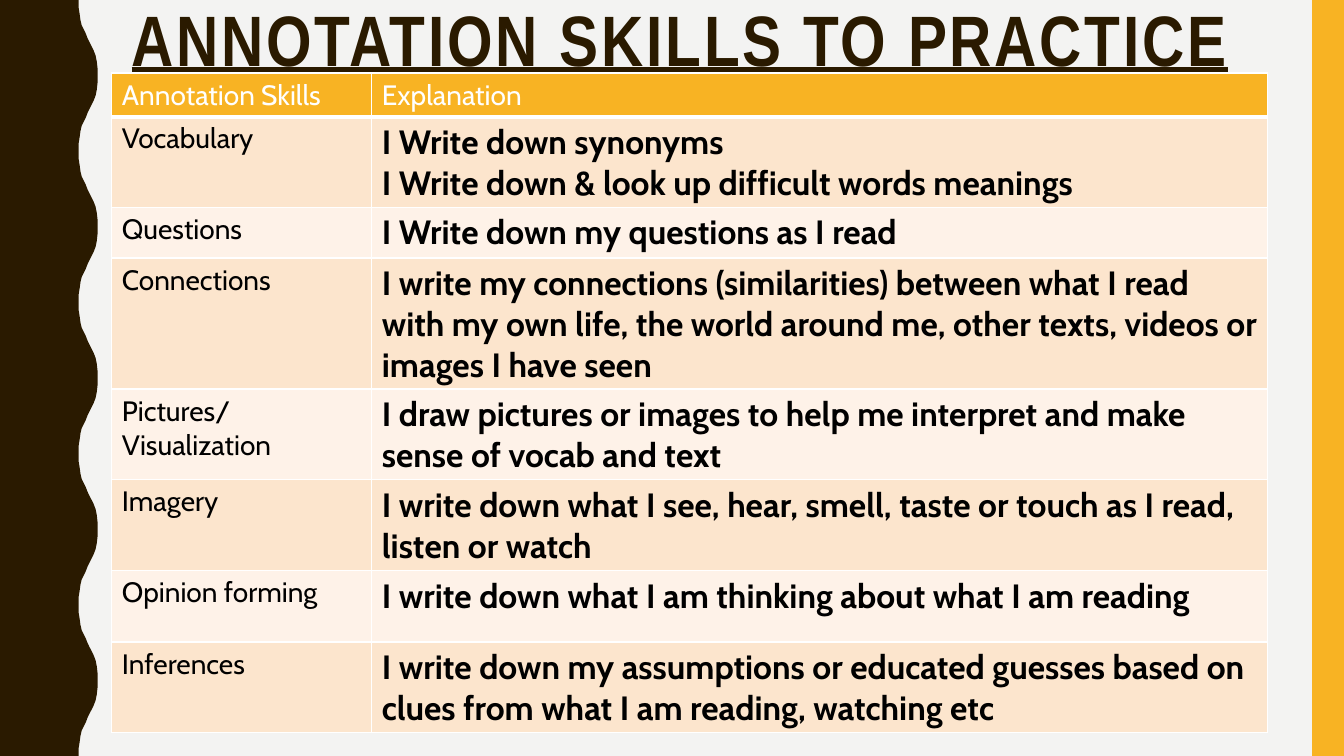
from dataclasses import dataclass

from lxml import etree
from pptx import Presentation
from pptx.dml.color import RGBColor
from pptx.enum.shapes import MSO_SHAPE
from pptx.enum.text import MSO_ANCHOR, PP_ALIGN
from pptx.oxml.ns import qn
from pptx.util import Cm, Pt

RECTANGLE = MSO_SHAPE.RECTANGLE
TOP = MSO_ANCHOR.TOP
LEFT = PP_ALIGN.LEFT

PAPER = RGBColor(0xF3, 0xF3, 0xF2)
BROWN = RGBColor(0x2A, 0x1A, 0x00)
AMBER = RGBColor(0xF8, 0xB3, 0x23)
PEACH = RGBColor(0xFC, 0xE5, 0xCD)
CREAM = RGBColor(0xFE, 0xF2, 0xE8)
WHITE = RGBColor(0xFF, 0xFF, 0xFF)
BLACK = RGBColor(0x00, 0x00, 0x00)

TITLE_FONT = "Arial Narrow"
BODY_FONT = "Cabin"

SLIDE_W, SLIDE_H = 33.87, 19.05
WAVE_COUNT = 5
WAVE_PERIOD = SLIDE_H / WAVE_COUNT
# Trough to crest of one wave, as x, y in centimetres
HALF_WAVE = [
    (1.98, 0), (1.98, 0.18), (2.01, 0.36), (2.03, 0.51), (2.06, 0.64),
    (2.11, 0.74), (2.16, 0.84), (2.21, 0.97), (2.26, 1.07), (2.31, 1.17),
    (2.36, 1.27), (2.41, 1.4), (2.44, 1.55), (2.46, 1.73), (2.46, 1.9),
]
COLUMN_WIDTHS = (6.55, 22.58)


@dataclass
class Skill:
    name: str
    explanation: str
    height: float


HEADER = Skill("Annotation Skills", "Explanation", 1.07)
SKILLS = [
    Skill("Vocabulary",
          "I Write down synonyms\nI Write down & look up difficult words meanings", 2.13),
    Skill("Questions", "I Write down my questions as I read", 1.17),
    Skill("Connections",
          "I write my connections (similarities) between what I read with my own life, "
          "the world around me, other texts, videos or images I have seen", 3.07),
    Skill("Pictures/Visualization",
          "I draw pictures or images to help me interpret and make sense of vocab and text", 2.13),
    Skill("Imagery",
          "I write down what I see, hear, smell, taste or touch as I read, listen or watch", 2.13),
    Skill("Opinion forming", "I write down what I am thinking about what I am reading", 1.8),
    Skill("Inferences",
          "I write down my assumptions or educated guesses based on clues from what "
          "I am reading, watching etc", 2.13),
]


def paint(sp, color: RGBColor) -> None:
    """Give a shape a plain fill without outline or shadow."""
    sp.fill.solid()
    sp.fill.fore_color.rgb = color
    sp.line.fill.background()
    sp.shadow.inherit = False


def add_wavy_edge(s) -> None:
    wave = HALF_WAVE + [(x, WAVE_PERIOD - y) for x, y in reversed(HALF_WAVE[1:-1])]
    points = [(x, y + i * WAVE_PERIOD) for i in range(WAVE_COUNT) for x, y in wave]
    points += [(HALF_WAVE[0][0], SLIDE_H), (0, SLIDE_H)]
    builder = s.shapes.build_freeform(0, 0)
    builder.add_line_segments([(Cm(x), Cm(y)) for x, y in points], close=True)
    paint(builder.convert_to_shape(), BROWN)


def add_title(s, text: str) -> None:
    tf = s.shapes.add_textbox(Cm(3.07), 0, Cm(29.21), Cm(3.68)).text_frame
    tf.word_wrap = True
    tf.vertical_anchor = TOP
    tf.text = text
    p = tf.paragraphs[0]
    p.alignment = LEFT
    p.line_spacing = 0.9
    r = p.runs[0]
    r.font.name = TITLE_FONT
    r.font.size = Pt(51)
    r.font.bold = r.font.underline = True
    r.font.color.rgb = BROWN
    r.font._element.set("spc", "200")


def set_borders(cell, bottom: float) -> None:
    tc_pr = cell._tc.get_or_add_tcPr()
    for side, width in (("L", 1), ("R", 1), ("T", 1), ("B", bottom)):
        ln = etree.SubElement(tc_pr, qn(f"a:ln{side}"), w=str(Pt(width)))
        fill = etree.SubElement(ln, qn("a:solidFill"))
        etree.SubElement(fill, qn("a:srgbClr"), val=str(WHITE))


def fill_cell(cell, text: str, size: float, bold: bool,
              color: RGBColor, fill: RGBColor, bottom: float) -> None:
    set_borders(cell, bottom)
    cell.fill.solid()
    cell.fill.fore_color.rgb = fill
    cell.text = text
    for p in cell.text_frame.paragraphs:
        for r in p.runs:
            r.font.name = BODY_FONT
            r.font.size = Pt(size)
            r.font.bold = bold
            r.font.color.rgb = color


def add_skill_table(s) -> None:
    rows = [HEADER, *SKILLS]
    height = sum(row.height for row in rows)
    table = s.shapes.add_table(len(rows), len(COLUMN_WIDTHS), Cm(2.82), Cm(1.84),
                               Cm(sum(COLUMN_WIDTHS)), Cm(height)).table
    for column, width in zip(table.columns, COLUMN_WIDTHS):
        column.width = Cm(width)
    for i, row in enumerate(rows):
        table.rows[i].height = Cm(row.height)
        name, explanation = table.cell(i, 0), table.cell(i, 1)
        if i == 0:
            fill_cell(name, row.name, 20, False, WHITE, AMBER, 3)
            fill_cell(explanation, row.explanation, 20, False, WHITE, AMBER, 3)
        else:
            band = PEACH if i % 2 else CREAM
            fill_cell(name, row.name, 20, False, BLACK, band, 1)
            fill_cell(explanation, row.explanation, 24, True, BLACK, band, 1)


def main() -> None:
    prs = Presentation()
    prs.slide_width, prs.slide_height = Cm(SLIDE_W), Cm(SLIDE_H)
    s = prs.slides.add_slide(prs.slide_layouts[6])
    s.background.fill.solid()
    s.background.fill.fore_color.rgb = PAPER
    add_wavy_edge(s)
    paint(s.shapes.add_shape(RECTANGLE, Cm(33.07), 0, Cm(0.8), Cm(SLIDE_H)), AMBER)
    add_title(s, "ANNOTATION SKILLS TO PRACTICE")
    add_skill_table(s)
    prs.save("out.pptx")


if __name__ == "__main__":
    main()
